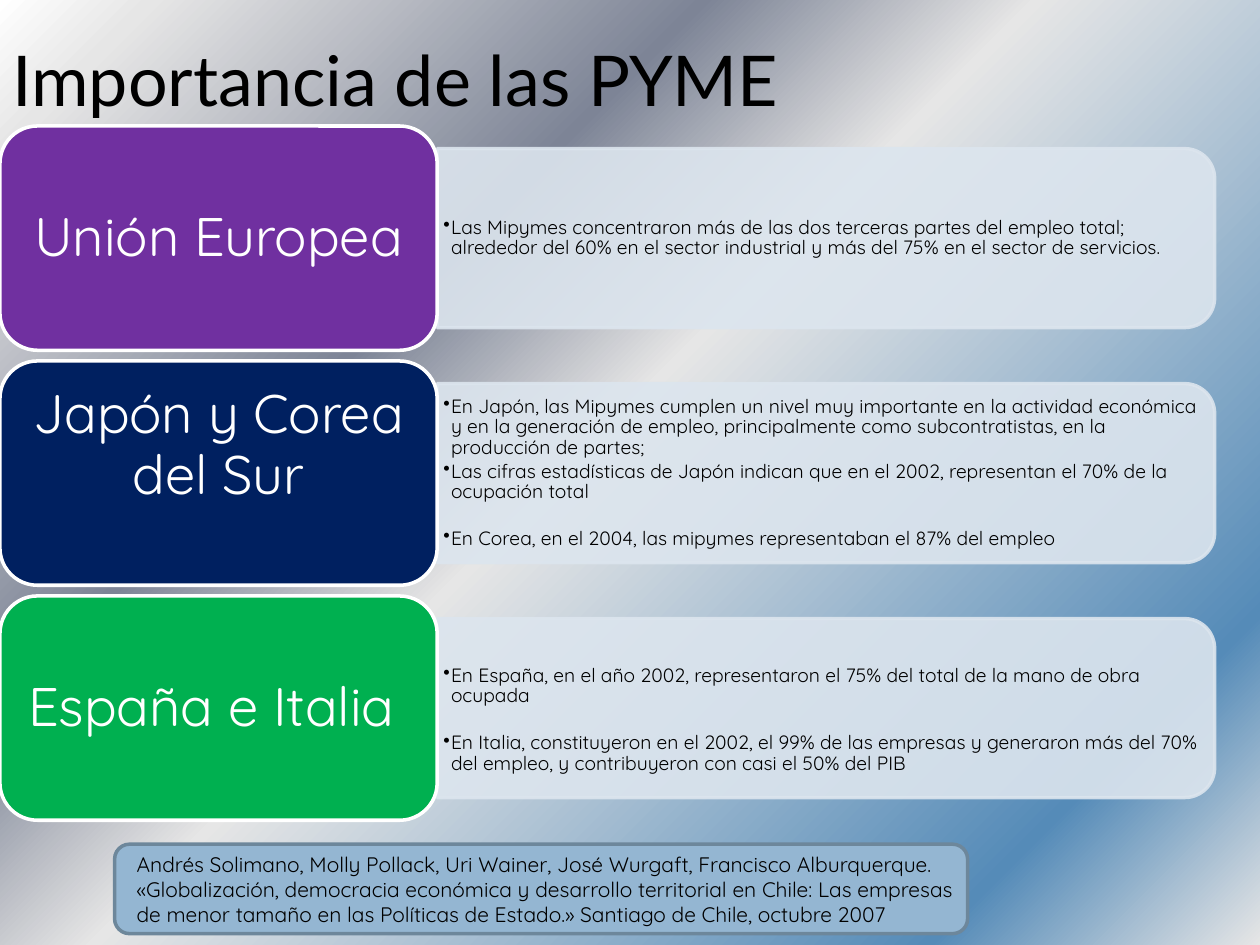
import pptx
import pptx.util
import pptx.dml.color
import pptx.enum.shapes
import pptx.enum.text
import pptx.oxml.ns
from lxml import etree

Inches, Pt = pptx.util.Inches, pptx.util.Pt
SHAPE = pptx.enum.shapes.MSO_SHAPE
ANCHOR = pptx.enum.text.MSO_ANCHOR
ALIGN = pptx.enum.text.PP_ALIGN
qn = pptx.oxml.ns.qn

# Content
COLORS = {
    "black": "000000", "white": "FFFFFF", "panel": "DCE5EE",
    "purple": "7030A0", "navy": "002060", "green": "00B050",
    "source": "94B6D2", "source_line": "6D879B",
}
BACKGROUND = [(0, "FFFFFF"), (7, "E6E6E6"), (32, "7D8496"),
              (47, "E6E6E6"), (85, "558BB8"), (100, "E6E6E6")]
TITLE = "Importancia de las PYME"
# Each point is its text and the space before it in points
REGIONS = [
    {"name": "Unión Europea", "color": "purple", "points": [
        ("Las Mipymes concentraron más de las dos terceras partes del empleo total; "
         "alrededor del 60% en el sector industrial y más del 75% en el sector de servicios.", 0),
    ]},
    {"name": "Japón y Corea del Sur", "color": "navy", "name_lift": 0.44, "points": [
        ("En Japón, las Mipymes cumplen un nivel muy importante en la actividad económica "
         "y en la generación de empleo, principalmente como subcontratistas, en la "
         "producción de partes;", 0),
        ("Las cifras estadísticas de Japón indican que en el 2002, representan el 70% "
         "de la ocupación total", 1.5),
        ("En Corea, en el 2004, las mipymes representaban el 87% del empleo", 15),
    ]},
    {"name": "España e Italia ", "color": "green", "points_drop": 0.19, "points": [
        ("En España, en el año 2002, representaron el 75% del total de la mano de obra "
         "ocupada", 0),
        ("En Italia, constituyeron en el 2002, el 99% de las empresas y generaron más del "
         "70% del empleo, y contribuyeron con casi el 50% del PIB", 15),
    ]},
]
SOURCE = ("Andrés Solimano, Molly Pollack, Uri Wainer, José Wurgaft, Francisco Alburquerque. "
          "«Globalización, democracia económica y desarrollo territorial en Chile: Las empresas "
          "de menor tamaño en las Políticas de Estado.» Santiago de Chile, octubre 2007")

# Layout in inches
CARD_TOP, CARD_STEP, CARD_W, CARD_H = 1, 1.865, 3.47, 1.78
PANEL_W, PANEL_H = 6.17, 1.42
POINTS_W, POINTS_H = 6.1, 1.28


def rgb(name):
    return pptx.dml.color.RGBColor.from_string(COLORS[name])


def write(box, paragraphs, size, font="Quicksand", color="black", align=ALIGN.LEFT,
          spacing=1.0, insets=(0.1, 0.05, 0.1, 0.05), bullet=None):
    """Fill a box with (text, space before) paragraphs."""
    frame = box.text_frame
    frame.word_wrap = True
    frame.vertical_anchor = ANCHOR.MIDDLE
    (frame.margin_left, frame.margin_top,
     frame.margin_right, frame.margin_bottom) = map(Inches, insets)
    for index, (text, before) in enumerate(paragraphs):
        para = frame.add_paragraph() if index else frame.paragraphs[0]
        if bullet:
            props = para._p.get_or_add_pPr()
            props.set("marL", str(Inches(0.06)))
            props.set("indent", str(Inches(-0.06)))
            etree.SubElement(props, qn("a:buChar")).set("char", bullet)
        para.alignment = align
        para.line_spacing = spacing
        para.space_before = Pt(before)
        span = para.add_run()
        span.text = text
        span.font.name = font
        span.font.size = Pt(size)
        span.font.color.rgb = rgb(color)


def add_box(page, kind, place, fill, line):
    box = page.shapes.add_shape(kind, *map(Inches, place))
    box.shadow.inherit = False
    box.fill.solid()
    box.fill.fore_color.rgb = rgb(fill)
    box.line.color.rgb = rgb(line)
    box.line.width = Pt(2)
    return box


def add_text_box(page, place):
    return page.shapes.add_textbox(*map(Inches, place))


def paint_background(page):
    fill = page.background.fill
    fill.gradient()
    fill.gradient_angle = 315
    stops = page.background._cSld.find(".//" + qn("a:gsLst"))
    for stop in list(stops):
        stops.remove(stop)
    for position, color in BACKGROUND:
        stop = etree.SubElement(stops, qn("a:gs"), pos=str(position * 1000))
        etree.SubElement(stop, qn("a:srgbClr"), val=color)


def add_region(page, region, top):
    middle = top + CARD_H / 2

    # Translucent panel, turned so that its round corners face right
    panel = add_box(page, SHAPE.ROUND_2_SAME_RECTANGLE,
                    (CARD_W + (PANEL_W - PANEL_H) / 2, middle - PANEL_W / 2, PANEL_H, PANEL_W),
                    "panel", "panel")
    panel.rotation = 90
    for color in panel._element.spPr.iter(qn("a:srgbClr")):
        etree.SubElement(color, qn("a:alpha"), val="90000")

    # Bulleted points
    points = add_text_box(page, (CARD_W, middle - POINTS_H / 2, POINTS_W, POINTS_H))
    write(points, region["points"], 11, spacing=0.9, bullet="•",
          insets=(0.05, 0.02 + region.get("points_drop", 0), 0.05, 0.02))

    # Region card
    card = add_box(page, SHAPE.ROUNDED_RECTANGLE, (0, top, CARD_W, CARD_H),
                   region["color"], "white")
    write(card, [(region["name"], 0)], 31, color="white", align=ALIGN.CENTER, spacing=0.95,
          insets=(0.13, 0.06, 0.13, 0.06 + region.get("name_lift", 0)))


def main():
    deck = pptx.Presentation()
    deck.slide_width, deck.slide_height = Inches(10), Inches(7.5)
    page = deck.slides.add_slide(deck.slide_layouts[6])
    paint_background(page)

    # Title
    write(add_text_box(page, (0, 0, 9, 1.25)), [(TITLE, 0)], 40, font="Lato")

    # Regions
    for index, region in enumerate(REGIONS):
        add_region(page, region, CARD_TOP + index * CARD_STEP)

    # Source
    source = add_box(page, SHAPE.ROUNDED_RECTANGLE, (0.91, 6.7, 6.77, 0.71),
                     "source", "source_line")
    write(source, [(SOURCE, 0)], 12, insets=(0.14, 0, 0.07, 0))

    deck.save("out.pptx")


if __name__ == "__main__":
    main()
